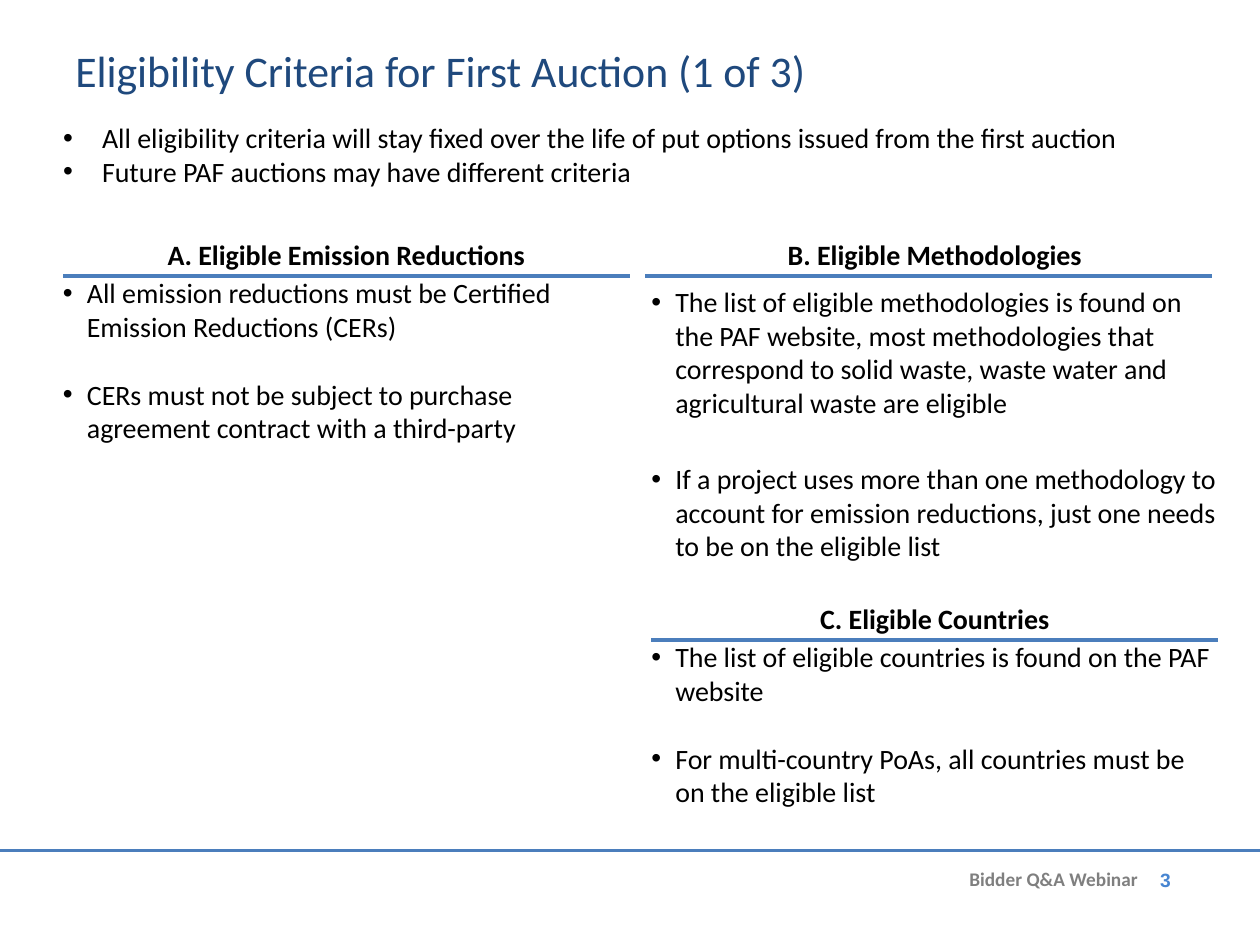
import pptx
import pptx.util
from lxml import etree
from pptx.dml.color import RGBColor
from pptx.enum.shapes import MSO_CONNECTOR
from pptx.enum.text import MSO_ANCHOR, PP_ALIGN
from pptx.oxml.ns import qn
from pptx.util import Inches

BLACK = RGBColor(0x00, 0x00, 0x00)
NAVY = RGBColor(0x1F, 0x49, 0x7D)
RULE_BLUE = RGBColor(0x4B, 0x7E, 0xBC)
PAGE_BLUE = RGBColor(0x47, 0x85, 0xD1)
GRAY = RGBColor(0x7F, 0x7F, 0x7F)

COLUMN_WIDTH = 4.5
LEFT_COLUMN, RIGHT_COLUMN = 0.5, 5.17


class CriteriaSlide:
    body_size = 16
    font_name = "Calibri"

    def __init__(self, slide):
        self.slide = slide

    def style(self, paragraph, size, color=BLACK, bold=False, font_name=None):
        for run in paragraph.runs:
            run.font.name = font_name or self.font_name
            run.font.size = pptx.util.Pt(size)
            run.font.bold = bold
            run.font.color.rgb = color

    def frame(self, left, top, width, height):
        box = self.slide.shapes.add_textbox(
            Inches(left), Inches(top), Inches(width), Inches(height))
        box.text_frame.word_wrap = True
        return box.text_frame

    def label(self, text, left, top, width, height, size, align=PP_ALIGN.LEFT,
              anchor=MSO_ANCHOR.TOP, **style):
        frame = self.frame(left, top, width, height)
        frame.vertical_anchor = anchor
        frame.text = text
        frame.paragraphs[0].alignment = align
        self.style(frame.paragraphs[0], size, **style)

    def bullets(self, items, left, top, width, height, indent=0.19, gap=0):
        """Bulleted list without margins; gap is the space between items in points."""
        frame = self.frame(left, top, width, height)
        frame.margin_left = frame.margin_right = 0
        frame.margin_top = frame.margin_bottom = 0
        for number, item in enumerate(items):
            paragraph = frame.paragraphs[0] if number == 0 else frame.add_paragraph()
            paragraph.text = item
            properties = paragraph._p.get_or_add_pPr()
            properties.set("marL", str(Inches(indent)))
            properties.set("indent", str(-Inches(indent)))
            etree.SubElement(properties, qn("a:buFont")).set("typeface", "Arial")
            etree.SubElement(properties, qn("a:buChar")).set("char", "•")
            if number:
                paragraph.space_before = pptx.util.Pt(gap)
            self.style(paragraph, self.body_size)

    def rule(self, left, top, width, weight):
        line = self.slide.shapes.add_connector(
            MSO_CONNECTOR.STRAIGHT, Inches(left), Inches(top),
            Inches(left + width), Inches(top))
        line.line.color.rgb = RULE_BLUE
        line.line.width = pptx.util.Pt(weight)
        etree.SubElement(line._element.spPr, qn("a:effectLst"))

    def section(self, heading, items, left, top, gap, rule_left=None, drop=0):
        """Heading above a rule, with its list starting drop inches below the rule."""
        rule_top = top + 0.36
        self.bullets(items, left, rule_top + drop, COLUMN_WIDTH, 2 - drop, gap=gap)
        self.label(heading, left, top, COLUMN_WIDTH, 0.38, self.body_size,
                   align=PP_ALIGN.CENTER, anchor=MSO_ANCHOR.MIDDLE, bold=True)
        self.rule(left if rule_left is None else rule_left, rule_top,
                  COLUMN_WIDTH, 2)


def main():
    deck = pptx.Presentation()
    deck.slide_width, deck.slide_height = Inches(10), Inches(7.5)
    page = CriteriaSlide(deck.slides.add_slide(deck.slide_layouts[6]))

    page.label("Bidder Q&A Webinar", 3.42, 6.83, 5.71, 0.29, 11,
               align=PP_ALIGN.RIGHT, color=GRAY, bold=True)
    page.rule(0, 6.75, 10, 1.5)
    page.label("3", 9.11, 6.84, 0.44, 0.35, 11,
               color=PAGE_BLUE, bold=True, font_name="Arial")

    page.label("Eligibility Criteria for First Auction (1 of 3)",
               0.5, 0.3, 9.25, 0.52, 25, color=NAVY)
    page.bullets([
        "All eligibility criteria will stay fixed over the life of put options "
        "issued from the first auction",
        "Future PAF auctions may have different criteria",
    ], 0.5, 0.96, 9.12, 0.38, indent=0.31)

    page.section("A. Eligible Emission Reductions", [
        "All emission reductions must be Certified Emission Reductions (CERs)",
        "CERs must not be subject to purchase agreement contract with a third-party",
    ], LEFT_COLUMN, 1.83, gap=19.5)
    page.section("B. Eligible Methodologies", [
        "The list of eligible methodologies is found on the PAF website, most "
        "methodologies that correspond to solid waste, waste water and "
        "agricultural waste are eligible",
        "If a project uses more than one methodology to account for emission "
        "reductions, just one needs to be on the eligible list",
    ], RIGHT_COLUMN, 1.83, gap=24.4, rule_left=5.12, drop=0.07)
    page.section("C. Eligible Countries", [
        "The list of eligible countries is found on the PAF website",
        "For multi-country PoAs, all countries must be on the eligible list",
    ], RIGHT_COLUMN, 4.72, gap=19.5)

    deck.save("out.pptx")


if __name__ == "__main__":
    main()
